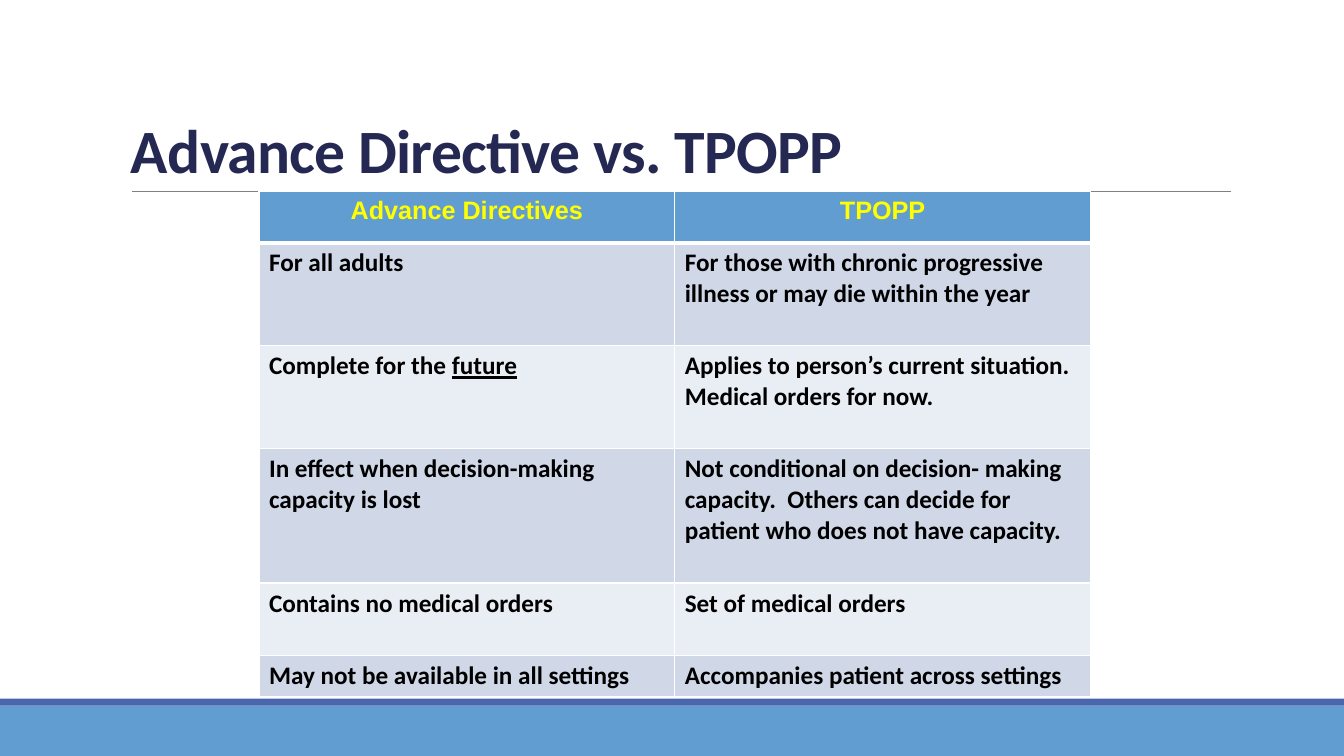
from lxml import etree
from pptx import Presentation
from pptx.dml.color import RGBColor
from pptx.enum import shapes, text
from pptx.oxml.ns import qn
from pptx.util import Pt

WHITE = RGBColor(0xFF, 0xFF, 0xFF)
BLACK = RGBColor(0, 0, 0)
GRAY = RGBColor(0x80, 0x80, 0x80)
NAVY = RGBColor(0x24, 0x28, 0x52)
BLUE = RGBColor(0x62, 0x9D, 0xD1)
INDIGO = RGBColor(0x4A, 0x66, 0xAC)
YELLOW = RGBColor(0xFF, 0xFF, 0x00)
BAND_DARK = RGBColor(0xD0, 0xD8, 0xE8)
BAND_LIGHT = RGBColor(0xE9, 0xED, 0xF4)

HEADERS = ["Advance Directives", "TPOPP"]
# A cell is a string, or a (plain, underlined) pair
ROWS = [
    ["For all adults",
     "For those with chronic progressive illness or may die within the year"],
    [("Complete for the ", "future"),
     "Applies to person’s current situation. Medical orders for now."],
    ["In effect when decision-making capacity is lost",
     "Not conditional on decision- making capacity.  Others can decide for "
     "patient who does not have capacity."],
    ["Contains no medical orders", "Set of medical orders"],
    ["May not be available in all settings",
     "Accompanies patient across settings"],
]
ROW_HEIGHTS = [36.5, 73.5, 73.5, 96, 52, 29.5]
COL_WIDTH = 297


def add_text(p, content, size=18, font="Calibri", color=BLACK,
             underline=None, spacing=None):
    r = p.add_run()
    r.text = content
    r.font.size, r.font.name, r.font.bold = Pt(size), font, True
    r.font.color.rgb = color
    r.font.underline = underline
    if spacing is not None:
        r.font._element.set("spc", str(int(spacing * 100)))


def add_bar(s, top, height, color):
    sp = s.shapes.add_shape(shapes.MSO_SHAPE.RECTANGLE,
                            0, Pt(top), Pt(960), Pt(height))
    sp.shadow.inherit = False
    sp.fill.solid()
    sp.fill.fore_color.rgb = color
    sp.line.fill.background()


def add_rule(s, left, right, y):
    ln = s.shapes.add_connector(shapes.MSO_CONNECTOR.STRAIGHT,
                                Pt(left), Pt(y), Pt(right), Pt(y))
    ln.line.color.rgb = GRAY
    ln.line.width = Pt(0.5)
    etree.SubElement(ln._element.spPr, qn("a:effectLst"))


def add_title(s, content):
    tf = s.shapes.add_textbox(Pt(86.5), Pt(22.5), Pt(792), Pt(114)).text_frame
    tf.word_wrap = True
    tf.vertical_anchor = text.MSO_ANCHOR.BOTTOM
    p = tf.paragraphs[0]
    p.line_spacing = 0.85
    add_text(p, content, size=44, color=NAVY, spacing=-0.5)


def set_borders(cell, **widths):
    tc_pr = cell._tc.get_or_add_tcPr()
    for side, width in widths.items():
        ln = etree.SubElement(tc_pr, qn(f"a:ln{side}"), w=str(Pt(width)))
        fill = etree.SubElement(ln, qn("a:solidFill"))
        etree.SubElement(fill, qn("a:srgbClr"), val=str(WHITE))


def format_cell(cell, fill, **borders):
    # Borders come before the fill in the cell properties
    set_borders(cell, **borders)
    cell.fill.solid()
    cell.fill.fore_color.rgb = fill


def add_comparison(s):
    table = s.shapes.add_table(len(ROW_HEIGHTS), len(HEADERS),
                               Pt(185), Pt(137), Pt(COL_WIDTH * 2),
                               Pt(sum(ROW_HEIGHTS))).table
    for col in table.columns:
        col.width = Pt(COL_WIDTH)
    for row, height in zip(table.rows, ROW_HEIGHTS):
        row.height = Pt(height)

    # Header row
    for j, header in enumerate(HEADERS):
        cell = table.cell(0, j)
        format_cell(cell, BLUE, L=1, R=1, B=3)
        p = cell.text_frame.paragraphs[0]
        p.alignment = text.PP_ALIGN.CENTER
        add_text(p, header, font="Arial", color=YELLOW)

    # Banded body rows
    for i, row in enumerate(ROWS, 1):
        for j, content in enumerate(row):
            cell = table.cell(i, j)
            format_cell(cell, BAND_DARK if i % 2 else BAND_LIGHT,
                        L=1, R=1, T=3 if i == 1 else 1, B=1)
            p = cell.text_frame.paragraphs[0]
            if isinstance(content, tuple):
                plain, underlined = content
                add_text(p, plain)
                add_text(p, underlined, underline=True)
            else:
                add_text(p, content)


def main():
    prs = Presentation()
    prs.slide_width, prs.slide_height = Pt(960), Pt(540)
    s = prs.slides.add_slide(prs.slide_layouts[6])

    # Footer bars and title rule
    add_bar(s, 504, 36, BLUE)
    add_bar(s, 499, 5, INDIGO)
    add_rule(s, 94.25, 879, 136.75)

    # Title and table
    add_title(s, "Advance Directive vs. TPOPP")
    add_comparison(s)
    prs.save("out.pptx")


if __name__ == "__main__":
    main()
